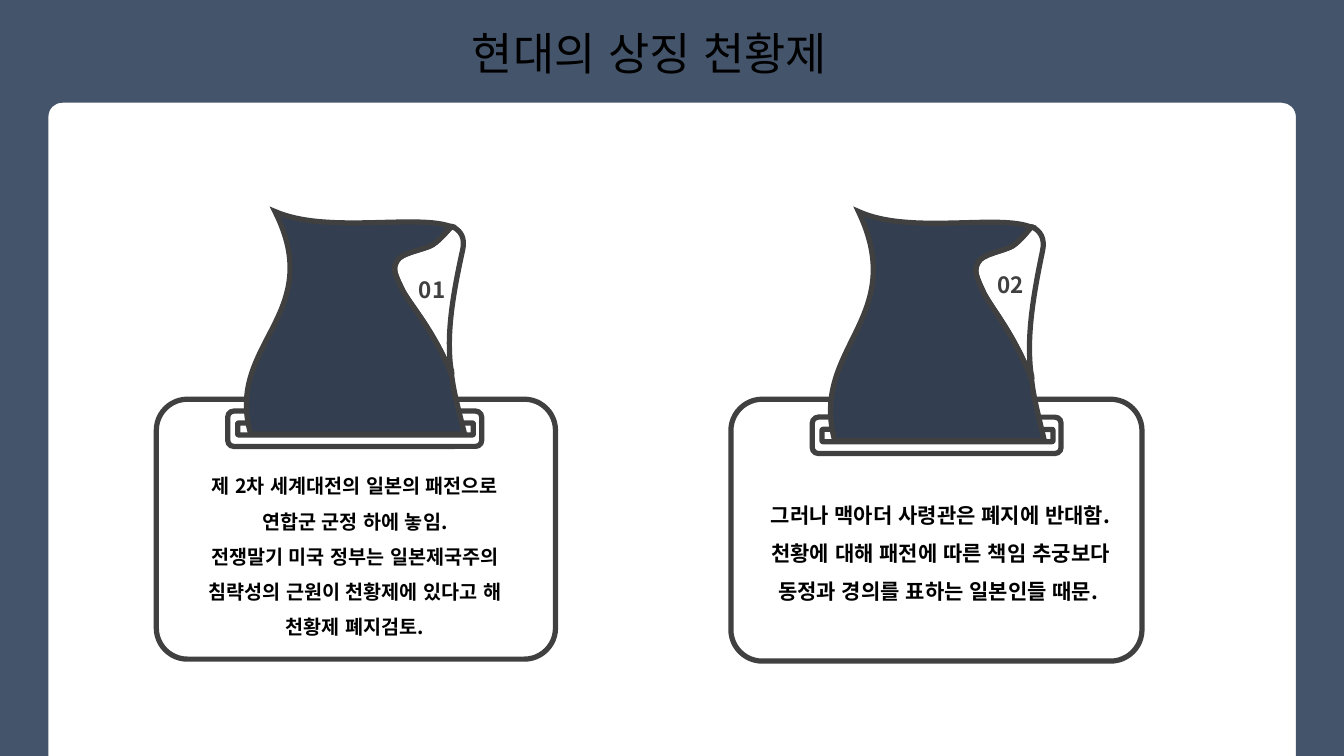
from lxml import etree
from pptx import Presentation
from pptx import util as u
from pptx.dml.color import RGBColor
from pptx.enum import lang, shapes, text
from pptx.oxml import ns

SLATE = RGBColor(0x44, 0x54, 0x6A)
NAVY = RGBColor(0x33, 0x3F, 0x50)
CHARCOAL = RGBColor(0x40, 0x40, 0x40)
WHITE = RGBColor(0xFF, 0xFF, 0xFF)
BLACK = RGBColor(0, 0, 0)

# Outlines in centimetres: a pair is a line, six numbers are a Bézier curve.
FRAME = [
    (0, 0), (33.87, 0), (33.87, 19.05), (32.66, 19.05), (32.66, 3.73), (32.66, 2.95),
    (32.66, 2.74, 32.49, 2.59, 32.31, 2.59), (1.57, 2.59),
    (1.37, 2.59, 1.22, 2.74, 1.22, 2.95), (1.22, 3.73), (1.22, 19.05), (0, 19.05),
]
FOLD = [
    (5.61, 0.41),
    (5.51, 0.51, 5.38, 0.69, 5.16, 0.84),
    (4.93, 0.97, 4.37, 1.04, 4.27, 1.24),
    (4.14, 1.45, 4.22, 1.6, 4.42, 2.01),
    (4.65, 2.41, 5.05, 2.84, 5.49, 3.76),
    (5.54, 3.86, 5.59, 3.96, 5.61, 4.04),
]
PAPER_BACK = FOLD + [
    (5.64, 4.04), (5.61, 3.86),
    (5.54, 3.15, 5.61, 2.36, 5.92, 0.97),
    (5.99, 0.66, 5.87, 0.48, 5.66, 0.38), (5.64, 0.38),
]
PAPER_FRONT = [
    (1.19, 0), (2.46, 0.56, 4.67, 0.08, 5.56, 0.36), (5.64, 0.38),
] + FOLD + [
    (5.64, 4.04), (5.64, 4.09),
    (5.69, 4.55, 5.82, 5, 5.97, 5.61), (0.58, 5.61),
    (-0.08, 3.33, 2.51, 2.62, 1.19, 0),
]

CARDS = [
    dict(card=(3.94, 10.06, 10.06, 6.55), clip=(5.74, 5.33), scale=(1, 1),
         body=(4.5, 11.53, 8.89, 4.62), size=14,
         words=["제 2차 세계대전의 일본의 패전으로 연합군 군정 하에 놓임.",
                "전쟁말기 미국 정부는 일본제국주의 침략성의 근원이 "
                "천황제에 있다고 해 천황제 폐지검토."],
         number="01", number_at=(10.24, 6.5, 1.3, 1.14)),
    dict(card=(18.42, 10.06, 10.36, 6.6), clip=(20.47, 5.33), scale=(0.98, 1.03),
         body=(18.69, 12.22, 10.03, 3.02), size=15,
         words=["그러나 맥아더 사령관은 폐지에 반대함.",
                "천황에 대해 패전에 따른 책임 추궁보다 "
                "동정과 경의를 표하는 일본인들 때문. "],
         number="02", number_at=(24.75, 6.36, 1.45, 1.14)),
]


def write(frame, lines, size, color=BLACK, bold=False, spacing=None):
    """Fill a text frame with centred paragraphs."""
    for index, line in enumerate(lines):
        para = frame.paragraphs[0] if index == 0 else frame.add_paragraph()
        para.alignment = text.PP_ALIGN.CENTER
        para.line_spacing = spacing
        span = para.add_run()
        span.text = line
        span.font.name = Page.FONT
        span.font.size = u.Pt(size)
        span.font.bold = bold
        span.font.color.rgb = color
        span.font.language_id = lang.MSO_LANGUAGE_ID.KOREAN
        span.font._element.set("kern", "0")
        east_asian = etree.SubElement(span.font._element, ns.qn("a:ea"))
        east_asian.set("typeface", Page.FONT)


class Page:
    FONT = "Noto Sans CJK KR"
    LINE_WIDTH = u.Pt(3.75)

    def __init__(self, deck):
        self.slide = deck.slides.add_slide(deck.slide_layouts[5])
        self.shapes = self.slide.shapes

    def paint(self, shape, fill, outlined=True):
        shape.shadow.inherit = False
        shape.fill.solid()
        shape.fill.fore_color.rgb = fill
        if not outlined:
            shape.line.fill.background()
            return
        shape.line.color.rgb = CHARCOAL
        shape.line.width = self.LINE_WIDTH
        miter = etree.SubElement(shape.line._ln, ns.qn("a:miter"))
        miter.set("lim", "800000")

    def outline(self, steps, fill, origin=(0, 0), scale=(1, 1), outlined=True):
        """Build a closed freeform, then bend the segments that are curves."""
        placed = [[u.Cm(origin[i % 2] + scale[i % 2] * value)
                   for i, value in enumerate(step)] for step in steps]
        builder = self.shapes.build_freeform(*placed[0])
        builder.add_line_segments([step[-2:] for step in placed[1:]], close=True)
        shape = builder.convert_to_shape()
        segments = list(shape._element.iter(ns.qn("a:lnTo")))
        for segment, step in zip(segments, placed[1:]):
            if len(step) == 6:
                segment.tag = ns.qn("a:cubicBezTo")
                for position in (0, 1):
                    x, y = step[2 * position:2 * position + 2]
                    handle = etree.Element(ns.qn("a:pt"))
                    handle.set("x", str(x - shape.left))
                    handle.set("y", str(y - shape.top))
                    segment.insert(position, handle)
        self.paint(shape, fill, outlined)

    def rounded(self, place, radius):
        box = self.shapes.add_shape(shapes.MSO_SHAPE.ROUNDED_RECTANGLE, *map(u.Cm, place))
        box.adjustments[0] = radius
        self.paint(box, WHITE)

    def title(self, words, place):
        box = self.shapes.title
        box.left, box.top, box.width, box.height = map(u.Cm, place)
        box.text_frame.auto_size = text.MSO_AUTO_SIZE.NONE
        write(box.text_frame, [words], 32)
        self.shapes._spTree.append(box._element)  # bring in front of the frame

    def textbox(self, lines, place, size, color=BLACK):
        frame = self.shapes.add_textbox(*map(u.Cm, place)).text_frame
        frame.word_wrap = True
        frame.auto_size = text.MSO_AUTO_SIZE.SHAPE_TO_FIT_TEXT
        write(frame, lines, size, color, bold=True, spacing=1.5)

    def clip(self, origin, scale):
        """Draw the clip and the curled paper it holds."""
        (left, top), (sx, sy) = origin, scale
        for (x, y, width, height), radius in (((0, 5.03, 6.4, 0.89), 0.17),
                                              ((0.25, 5.33, 5.94, 0.3), 0.09)):
            self.rounded((left + sx * x, top + sy * y, sx * width, sy * height), radius)
        self.outline(PAPER_BACK, WHITE, origin, scale)
        self.outline(PAPER_FRONT, NAVY, origin, scale)


def main():
    deck = Presentation()
    deck.slide_width, deck.slide_height = u.Cm(33.87), u.Cm(19.05)
    page = Page(deck)
    page.outline(FRAME, SLATE, outlined=False)
    page.title("현대의 상징 천황제", (8.79, 0.51, 15.16, 1.63))
    for card in CARDS:
        page.rounded(card["card"], 0.12)
        page.clip(card["clip"], card["scale"])
        page.textbox(card["words"], card["body"], card["size"])
        page.textbox([card["number"]], card["number_at"], 16, CHARCOAL)
    deck.save("out.pptx")


if __name__ == "__main__":
    main()
